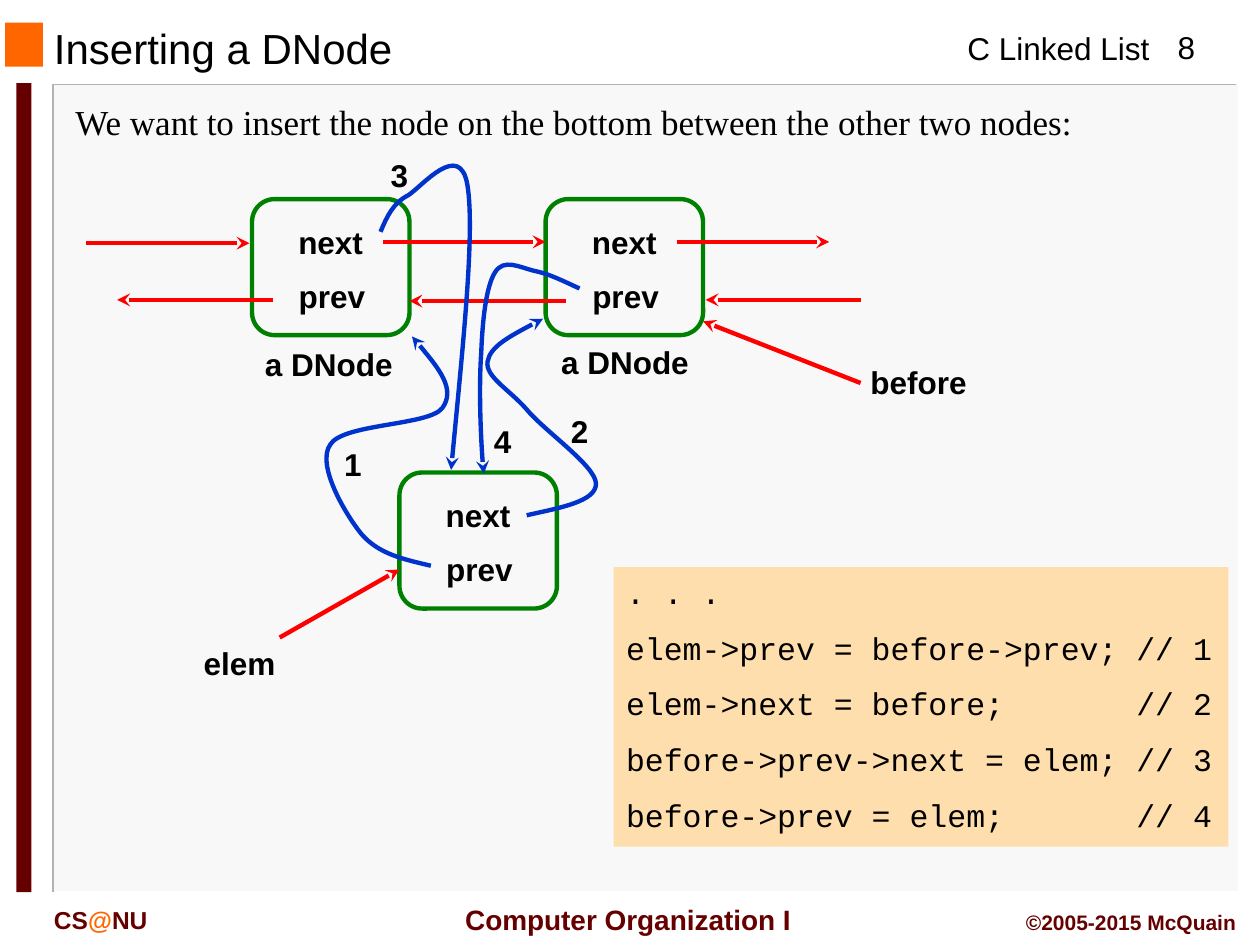
from lxml import etree
from pptx import Presentation
from pptx.dml.color import RGBColor
from pptx.enum.shapes import MSO_CONNECTOR, MSO_SHAPE
from pptx.enum.text import MSO_ANCHOR, PP_ALIGN
from pptx.oxml.ns import qn
from pptx.util import Inches, Pt

LEFT, MID, RIGHT = PP_ALIGN.LEFT, PP_ALIGN.CENTER, PP_ALIGN.RIGHT
TOP, CORE = MSO_ANCHOR.TOP, MSO_ANCHOR.MIDDLE
RECT, ROUND = MSO_SHAPE.RECTANGLE, MSO_SHAPE.ROUNDED_RECTANGLE
STRAIGHT = MSO_CONNECTOR.STRAIGHT

BLACK = RGBColor(0x00, 0x00, 0x00)
WHITE = RGBColor(0xFF, 0xFF, 0xFF)
PALE = RGBColor(0xF8, 0xF8, 0xF8)
GREY = RGBColor(0xB2, 0xB2, 0xB2)
ORANGE = RGBColor(0xFF, 0x66, 0x00)
MAROON = RGBColor(0x66, 0x00, 0x00)
GREEN = RGBColor(0x00, 0x80, 0x00)
RED = RGBColor(0xFF, 0x00, 0x00)
BLUE = RGBColor(0x00, 0x33, 0xCC)
SAND = RGBColor(0xFF, 0xDE, 0xAD)

COLS, ROWS = 1000, 750


class Board:
    sans, serif, mono = "Arial", "Times New Roman", "Courier New"
    stroke = 2.5

    def __init__(self, deck):
        self.slide = deck.slides.add_slide(deck.slide_layouts[6])
        self.shapes = self.slide.shapes
        self.col = deck.slide_width // COLS
        self.row = deck.slide_height // ROWS

    def place(self, x, y, w, h):
        return [round(v) for v in (x * self.col, y * self.row, w * self.col, h * self.row)]

    def box(self, area, fill=None, line=None, kind=RECT):
        shape = self.shapes.add_shape(kind, *self.place(*area))
        shape.shadow.inherit = False
        if fill is None:
            shape.fill.background()
        else:
            shape.fill.solid()
            shape.fill.fore_color.rgb = fill
        if line is None:
            shape.line.fill.background()
        else:
            self.ink(shape, line, self.stroke)
        return shape

    def ink(self, shape, color, width):
        shape.line.color.rgb = color
        shape.line.width = Pt(width)

    def tip(self, shape):
        edge = next(shape._element.iter(qn("a:ln")))
        etree.SubElement(edge, qn("a:tailEnd"), type="stealth")

    def add_runs(self, para, runs, size, font, bold):
        for words, color in runs:
            run = para.add_run()
            run.text = words
            run.font.size = Pt(size)
            run.font.name = font
            run.font.bold = bold
            run.font.color.rgb = color

    def text(self, area, runs, size=18, font=sans, bold=False, align=LEFT, anchor=TOP, wrap=True):
        frame = self.shapes.add_textbox(*self.place(*area)).text_frame
        frame.word_wrap = wrap
        frame.vertical_anchor = anchor
        para = frame.paragraphs[0]
        para.alignment = align
        self.add_runs(para, runs, size, font, bold)

    def label(self, x, y, words, w=142):
        self.text((x, y, w, 40), [(words, BLACK)], bold=True, align=MID)

    def node(self, x, y):
        self.box((x, y, 125, 108), line=GREEN, kind=ROUND)
        self.label(x + 21, y + 14, "next", 83)
        self.label(x + 22, y + 57, "prev", 83)

    def arrow(self, x1, y1, x2, y2):
        line = self.shapes.add_connector(STRAIGHT, *self.place(x1, y1, x2, y2))
        self.ink(line, RED, self.stroke)
        etree.SubElement(line._element.spPr, qn("a:effectLst"))
        self.tip(line)

    def trace(self, points, color, width):
        pen = self.shapes.build_freeform(*points[0], scale=(self.col, self.row))
        pen.add_line_segments(points[1:], close=False)
        shape = pen.convert_to_shape()
        shape.shadow.inherit = False
        shape.fill.background()
        self.ink(shape, color, width)
        return shape

    def curve(self, points):
        shape = self.trace(points, BLUE, self.stroke)
        steps = list(shape._element.iter(qn("a:lnTo")))
        route = steps[0].getparent()
        for i in range(0, len(steps), 3):
            bend = etree.SubElement(route, qn("a:cubicBezTo"))
            for step in steps[i:i + 3]:
                bend.append(step[0])
                route.remove(step)
        self.tip(shape)

    def code(self, area, lines, stop):
        frame = self.box(area, fill=SAND).text_frame
        frame.word_wrap = True
        frame.vertical_anchor = TOP
        for i, words in enumerate(lines):
            para = frame.add_paragraph() if i else frame.paragraphs[0]
            para.alignment = LEFT
            para.space_before = Pt(10.2)
            tabs = etree.SubElement(para._p.get_or_add_pPr(), qn("a:tabLst"))
            etree.SubElement(tabs, qn("a:tab"), pos=str(stop * self.col), algn="l")
            self.add_runs(para, [(words, BLACK)], 18, self.mono, False)


def frame(board):
    board.box((43, 67, 940, 641), fill=PALE)
    board.trace([(981, 67), (42, 67), (42, 708)], GREY, 1)
    board.trace([(983, 67), (983, 708), (44, 708)], WHITE, 1)
    board.box((4, 18, 30, 35), fill=ORANGE)
    board.box((13, 66, 12, 642), fill=MAROON)
    board.text((758, 18, 166, 40), [("C Linked List", BLACK)], wrap=False)
    board.text((908, 17, 67, 40), [("8", BLACK)], align=MID)
    board.text((353, 711, 291, 37), [("Computer Organization I", MAROON)], 16,
               bold=True, align=MID, anchor=CORE, wrap=False)
    board.text((33, 713, 150, 33), [("CS", MAROON), ("@", ORANGE), ("NU", MAROON)], 14, bold=True)
    board.text((783, 717, 208, 30), [("©2005-2015 McQuain", MAROON)], 12, bold=True, align=RIGHT)
    board.text((33, 19, 633, 38), [("Inserting a DNode", BLACK)], 24, anchor=CORE)


def main():
    deck = Presentation()
    deck.slide_width, deck.slide_height = Inches(10), Inches(7.5)
    board = Board(deck)
    frame(board)
    board.text((50, 75, 917, 44),
               [("We want to insert the node on the bottom between the other two nodes:", BLACK)],
               20, board.serif)
    for spot in ((433, 158), (200, 158), (317, 375)):
        board.node(*spot)

    for ends in ((304, 192, 433, 192), (537, 192, 658, 192), (68, 193, 198, 193),
                 (449, 239, 325, 239), (683, 238, 560, 238), (217, 238, 93, 238),
                 (222, 506, 317, 452), (683, 304, 558, 255)):
        board.arrow(*ends)

    board.code((487, 450, 488, 222), (
        ". . .",
        "elem->prev = before->prev;\t// 1",
        "elem->next = before;\t// 2",
        "before->prev->next = elem;\t// 3",
        "before->prev = elem;\t// 4"), 405)

    for x, y, words in ((190, 269, "a DNode"), (425, 267, "a DNode"),
                        (658, 283, "before"), (119, 506, "elem")):
        board.label(x, y, words)

    links = (
        (253, 348, [(342, 449), (321, 444), (301, 440), (287, 424), (274, 408), (251, 369),
                    (262, 353), (272, 336), (340, 338), (351, 324), (362, 309), (345, 288),
                    (327, 267)]),
        (433, 322, [(418, 409), (445, 403), (473, 398), (473, 384), (473, 370), (432, 342),
                    (418, 325), (404, 309), (385, 299), (387, 287), (389, 275), (410, 264),
                    (431, 253)]),
        (290, 119, [(302, 184), (307, 172), (312, 161), (324, 155), (335, 148), (365, 111),
                    (371, 147), (377, 184), (367, 278), (358, 373)]),
        (372, 330, [(460, 229), (447, 223), (435, 217), (424, 215), (412, 212), (400, 205),
                    (393, 216), (386, 227), (383, 253), (382, 280), (380, 307), (382, 360),
                    (384, 376)]),
    )
    for step, (x, y, points) in enumerate(links, 1):
        board.curve(points)
        board.label(x, y, str(step), 54)
    deck.save("out.pptx")


if __name__ == "__main__":
    main()
